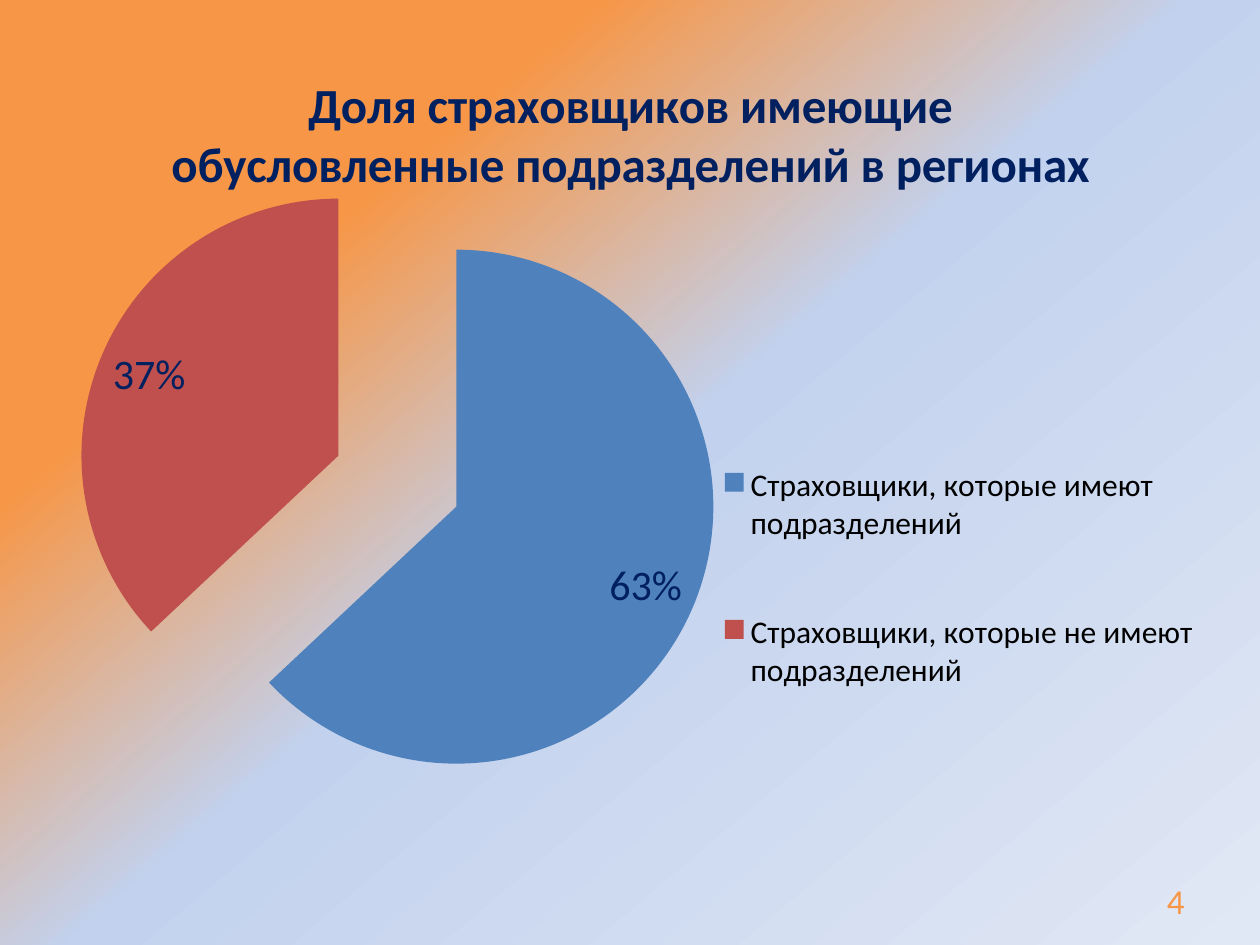
from lxml.etree import SubElement
from pptx import Presentation
from pptx.chart.data import CategoryChartData
from pptx.dml.color import RGBColor
from pptx.enum.chart import XL_CHART_TYPE as ChartType
from pptx.enum.chart import XL_LEGEND_POSITION as LegendPosition
from pptx.enum.text import MSO_ANCHOR as Anchor
from pptx.enum.text import PP_ALIGN as Align
from pptx.oxml import parse_xml
from pptx.oxml.ns import nsdecls, qn
from pptx.util import Inches, Pt


def rgb(value):
    return RGBColor.from_string(value)


def apply(target, values):
    for name, value in values.items():
        setattr(target, name, value)


class SlideBuilder:
    font_name = "Calibri"
    navy = "002060"
    orange = "F79646"
    black = "000000"
    slice_colors = ["4F81BD", "C0504D"]
    backdrop = [(25, orange), (50, "C2D1ED"), (100, "E1E8F5")]
    chart_width = 9.38
    chart_height = 6.88

    def __init__(self, deck):
        self.page = deck.slides.add_slide(deck.slide_layouts[6])

    def style(self, font, size, color, bold=False):
        apply(font, {"name": self.font_name, "size": Pt(size), "bold": bold})
        font.color.rgb = rgb(color)

    def background(self, angle):
        fill = self.page.background.fill
        fill.gradient()
        fill.gradient_angle = 360 - angle
        stops = next(self.page.background._cSld.iter(qn("a:gsLst")))
        for stop in list(stops):
            stops.remove(stop)
        for position, color in self.backdrop:
            stop = SubElement(stops, qn("a:gs"), pos=str(position * 1000))
            SubElement(stop, qn("a:srgbClr"), val=color)

    def layout(self, element, target=None, **lengths):
        for old in element.findall(qn("c:layout")):
            element.remove(old)
        values = {"layoutTarget": target} if target else {}
        values.update(xMode="edge", yMode="edge")
        for name, length in lengths.items():
            values[name] = length / (self.chart_width if name in "xw" else self.chart_height)
        entries = "".join(f'<c:{name} val="{value}"/>' for name, value in values.items())
        layout = parse_xml(
            f'<c:layout {nsdecls("c")}><c:manualLayout>{entries}</c:manualLayout></c:layout>'
        )
        before = element.find(qn("c:tx"))
        if before is None:
            before = element.find(qn("c:legendPos"))
        if before is None:
            element.insert(0, layout)
        else:
            before.addnext(layout)

    def pie(self, title, shares, left, top):
        data = CategoryChartData(number_format="0%")
        data.categories = list(shares)
        data.add_series("Series 1", list(shares.values()))
        chart = self.page.shapes.add_chart(
            ChartType.PIE, Inches(left), Inches(top),
            Inches(self.chart_width), Inches(self.chart_height), data,
        ).chart
        self.style(chart.font, 18, self.black)
        self.chart_title(chart, title)
        self.legend(chart)
        self.slices(chart.plots[0])
        plot_area = chart._chartSpace.chart.plotArea
        self.layout(plot_area, "inner", x=0.25, y=0.96, w=5.19, h=5.1)

    def chart_title(self, chart, text):
        chart.has_title = True
        title = chart.chart_title
        para = title.text_frame.paragraphs[0]
        span = para.add_run()
        span.text = text
        self.style(para.font, 28, self.navy, True)
        self.style(span.font, 28, self.navy, True)
        title.include_in_layout = False
        self.layout(title._element, x=0.98, y=0.19)

    def legend(self, chart):
        chart.has_legend = True
        legend = chart.legend
        apply(legend, {"position": LegendPosition.RIGHT, "include_in_layout": False})
        self.style(legend.font, 18, self.black)
        self.layout(legend._element, x=5.33, y=2.83, w=3.94, h=2.9)

    def slices(self, plot):
        plot.vary_by_categories = True
        series = plot.series[0]
        explosion = parse_xml(f'<c:explosion {nsdecls("c")} val="25"/>')
        series._element.find(qn("c:tx")).addnext(explosion)
        for index, color in enumerate(self.slice_colors):
            fill = series.points[index].format.fill
            fill.solid()
            fill.fore_color.rgb = rgb(color)
        labels = series.data_labels
        apply(labels, {
            "show_value": True,
            "number_format": "0%",
            "number_format_is_linked": False,
        })
        self.style(labels.font, 24, self.navy)

    def page_number(self, number, left, top, width, height):
        box = self.page.shapes.add_textbox(
            Inches(left), Inches(top), Inches(width), Inches(height)
        )
        apply(box.text_frame, {"word_wrap": True, "vertical_anchor": Anchor.MIDDLE})
        para = box.text_frame.paragraphs[0]
        para.alignment = Align.RIGHT
        span = para.add_run()
        span.text = str(number)
        self.style(span.font, 20, self.orange)


def main():
    deck = Presentation()
    apply(deck, {"slide_width": Inches(10), "slide_height": Inches(7.5)})
    builder = SlideBuilder(deck)
    builder.background(50)
    builder.pie(
        "Доля страховщиков имеющие обусловленные подразделений в регионах",
        {
            "Страховщики, которые имеют подразделений": 0.63,
            "Страховщики, которые не имеют подразделений": 0.37,
        },
        0.31, 0.31,
    )
    builder.page_number(4, 7.17, 6.95, 2.33, 0.4)
    deck.save("out.pptx")


if __name__ == "__main__":
    main()
